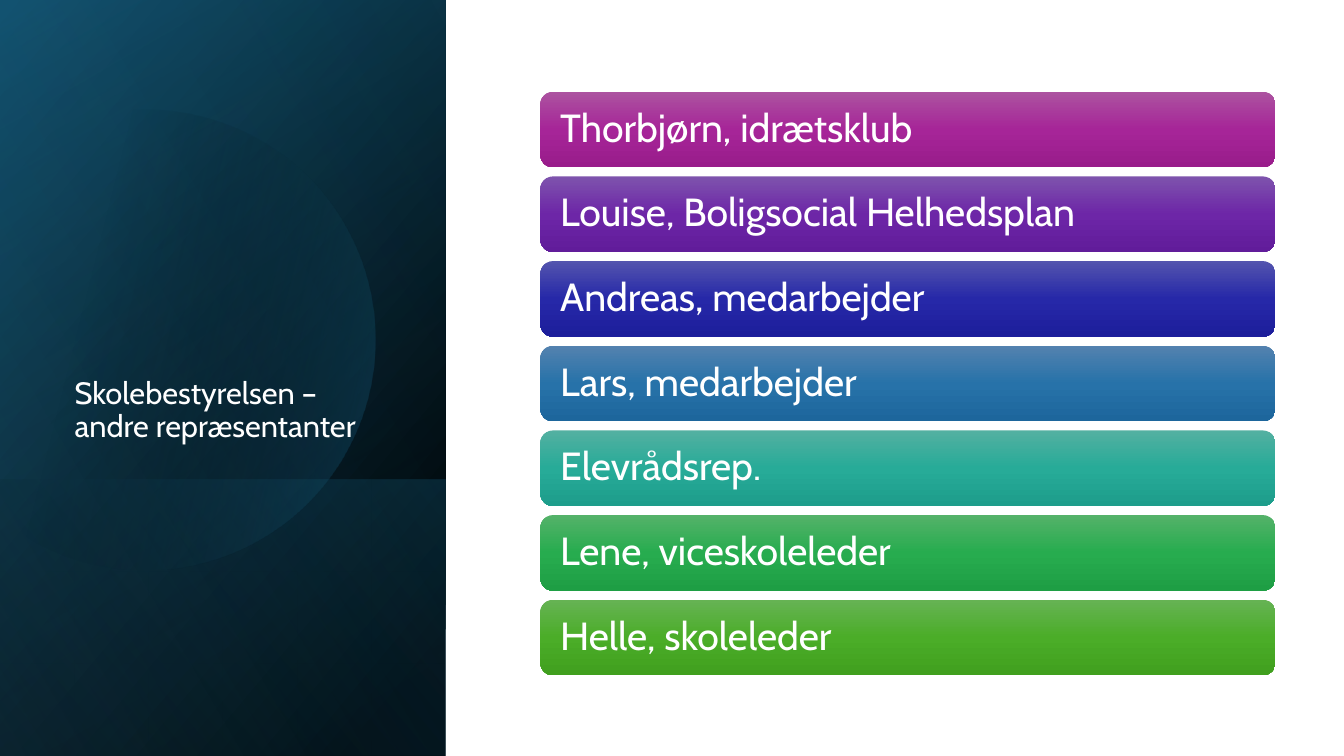
from math import acos, cos, sin

from lxml.etree import SubElement
from pptx import Presentation
from pptx.dml.color import RGBColor
from pptx.enum.shapes import MSO_SHAPE
from pptx.enum.text import MSO_ANCHOR, PP_ALIGN
from pptx.oxml.ns import qn
from pptx.util import Inches, Pt

FONT = "Cabin"
WHITE = RGBColor(0xFF, 0xFF, 0xFF)
BLACK = RGBColor(0x00, 0x00, 0x00)
DEEP_TEAL = RGBColor(0x10, 0x48, 0x62)
TEAL = RGBColor(0x15, 0x60, 0x82)
SKY = RGBColor(0x46, 0xB1, 0xE1)

# Each representative with the top, middle and bottom colour of the bar
REPRESENTATIVES = [
    ("Thorbjørn, idrætsklub", "AC53A0", "A62598", "991C8B"),
    ("Louise, Boligsocial Helhedsplan", "7E53AD", "6D26A7", "611C9A"),
    ("Andreas, medarbejder", "5354AE", "2628A8", "1D1E9B"),
    ("Lars, medarbejder", "5382AF", "2772A9", "1D669C"),
    ("Elevrådsrep.", "53B0A1", "27AB98", "1D9D8B"),
    ("Lene, viceskoleleder", "54B269", "27AC4F", "1E9E44"),
    ("Helle, skoleleder", "66B354", "4BAD28", "409F1E"),
]


def write_text(frame, text, size, anchor, inset=0.1):
    frame.word_wrap = True
    frame.vertical_anchor = anchor
    frame.margin_left = frame.margin_right = Inches(inset)
    frame.margin_top = frame.margin_bottom = Inches(0.05)
    paragraph = frame.paragraphs[0]
    paragraph.alignment = PP_ALIGN.LEFT
    paragraph.line_spacing = 0.9
    run = paragraph.add_run()
    run.text = text
    run.font.name = FONT
    run.font.size = Pt(size)
    run.font.color.rgb = WHITE


class BoardSlide:
    def __init__(self, slide, font_title=22, font_bar=28):
        self.slide = slide
        self.shapes = slide.shapes
        self.font_title = font_title
        self.font_bar = font_bar

    def paint(self, shape, stops, angle):
        """Fill with (position, colour, opacity) stops, all in percent."""
        shape.shadow.inherit = False
        shape.line.fill.background()
        shape.fill.gradient()
        gradient = shape.element.spPr.find(qn("a:gradFill"))
        stop_list = gradient.find(qn("a:gsLst"))
        for old_stop in list(stop_list):
            stop_list.remove(old_stop)
        for position, color, opacity in stops:
            stop = SubElement(stop_list, qn("a:gs"), pos=str(position * 1000))
            rgb = SubElement(stop, qn("a:srgbClr"), val=str(color))
            if opacity < 100:
                SubElement(rgb, qn("a:alpha"), val=str(opacity * 1000))
        gradient.find(qn("a:lin")).set("ang", str(angle * 60000))

    def panel(self, box, stops, angle):
        """Mirrored rectangle turned a quarter; box is its visible area."""
        left, top, width, height = box
        shape = self.shapes.add_shape(
            MSO_SHAPE.RECTANGLE,
            Inches(left + (width - height) / 2), Inches(top + (height - width) / 2),
            Inches(height), Inches(width))
        shape.rotation = 90
        shape.element.spPr.find(qn("a:xfrm")).set("flipH", "1")
        self.paint(shape, stops, angle)

    def cut_circle(self, center_x, center_y, radius, cut_x, stops, angle):
        """Circle with a straight left edge at cut_x."""
        limit = acos((cut_x - center_x) / radius)
        steps = 120
        angles = [limit * (2 * i / steps - 1) for i in range(steps + 1)]
        points = [(Inches(center_x + radius * cos(a)),
                   Inches(center_y + radius * sin(a))) for a in angles]
        builder = self.shapes.build_freeform(*points[0])
        builder.add_line_segments(points[1:], close=True)
        self.paint(builder.convert_to_shape(), stops, angle)

    def title(self, text, left, top, width, height):
        title = self.shapes.title
        title.left, title.top = Inches(left), Inches(top)
        title.width, title.height = Inches(width), Inches(height)
        write_text(title.text_frame, text, self.font_title, MSO_ANCHOR.BOTTOM)
        # Bring the title in front of the panels
        title.element.getparent().append(title.element)

    def bar(self, text, left, top, width, height, colors):
        shape = self.shapes.add_shape(
            MSO_SHAPE.ROUNDED_RECTANGLE,
            Inches(left), Inches(top), Inches(width), Inches(height))
        stops = [(pos, RGBColor.from_string(color), 100)
                 for pos, color in zip((0, 50, 100), colors)]
        self.paint(shape, stops, 90)
        write_text(shape.text_frame, text, self.font_bar, MSO_ANCHOR.MIDDLE, inset=0.16)


def main():
    prs = Presentation()
    prs.slide_width, prs.slide_height = Inches(13.33), Inches(7.5)
    board = BoardSlide(prs.slides.add_slide(prs.slide_layouts[5]))

    # Dark panel on the left
    side = (0, 0, 4.42, 7.5)
    board.panel(side, [(8, BLACK, 100), (100, DEEP_TEAL, 100)], 50)
    board.panel(side, [(0, BLACK, 0), (99, TEAL, 46)], 30)
    board.panel((0, 4.76, 4.42, 2.74), [(2, TEAL, 29), (100, BLACK, 30)], 130)
    board.cut_circle(1.44, 3.37, 2.28, -0.15, [(29, BLACK, 0), (100, TEAL, 43)], 14)
    board.panel(side, [(0, BLACK, 0), (99, SKY, 11)], 120)

    # Title
    board.title("Skolebestyrelsen – andre repræsentanter", 0.64, 1.84, 3.41, 2.62)

    # Representatives
    for row, (name, *colors) in enumerate(REPRESENTATIVES):
        board.bar(name, 5.36, 0.91 + 0.84 * row, 7.29, 0.75, colors)

    prs.save("out.pptx")


if __name__ == "__main__":
    main()
